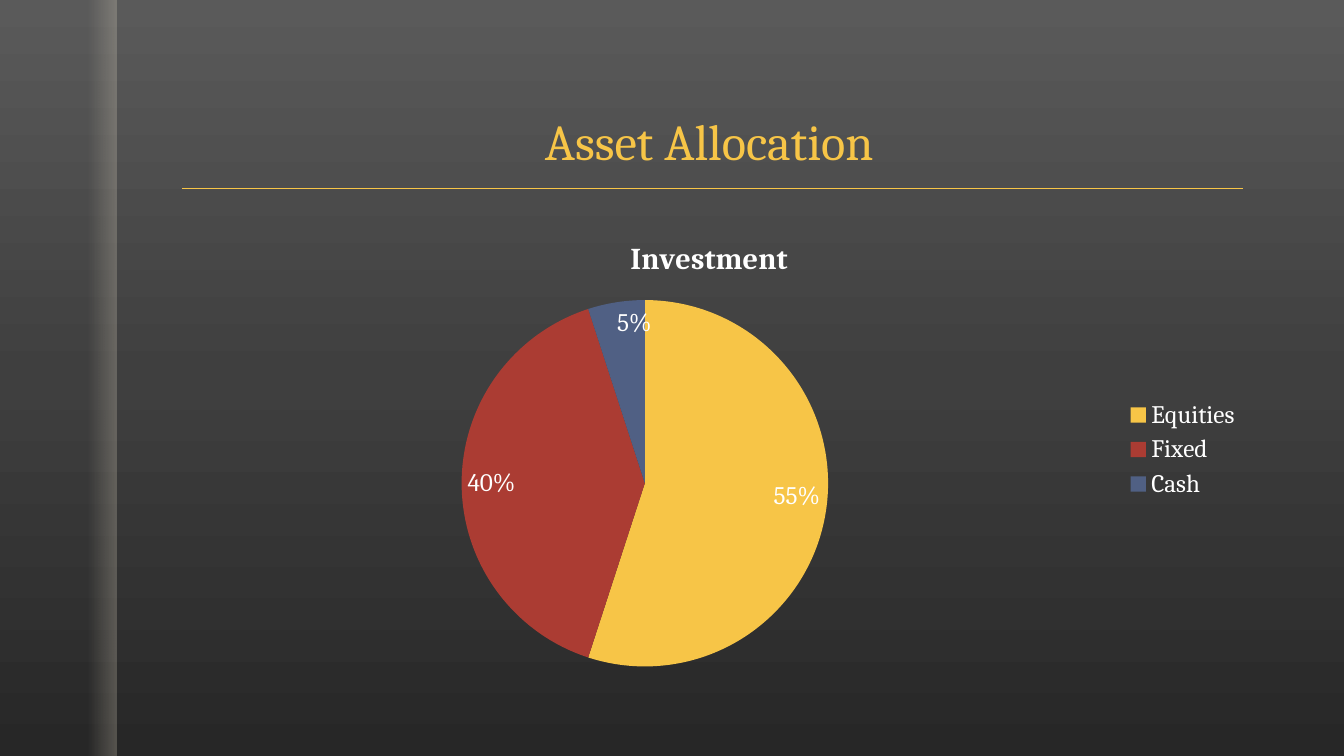
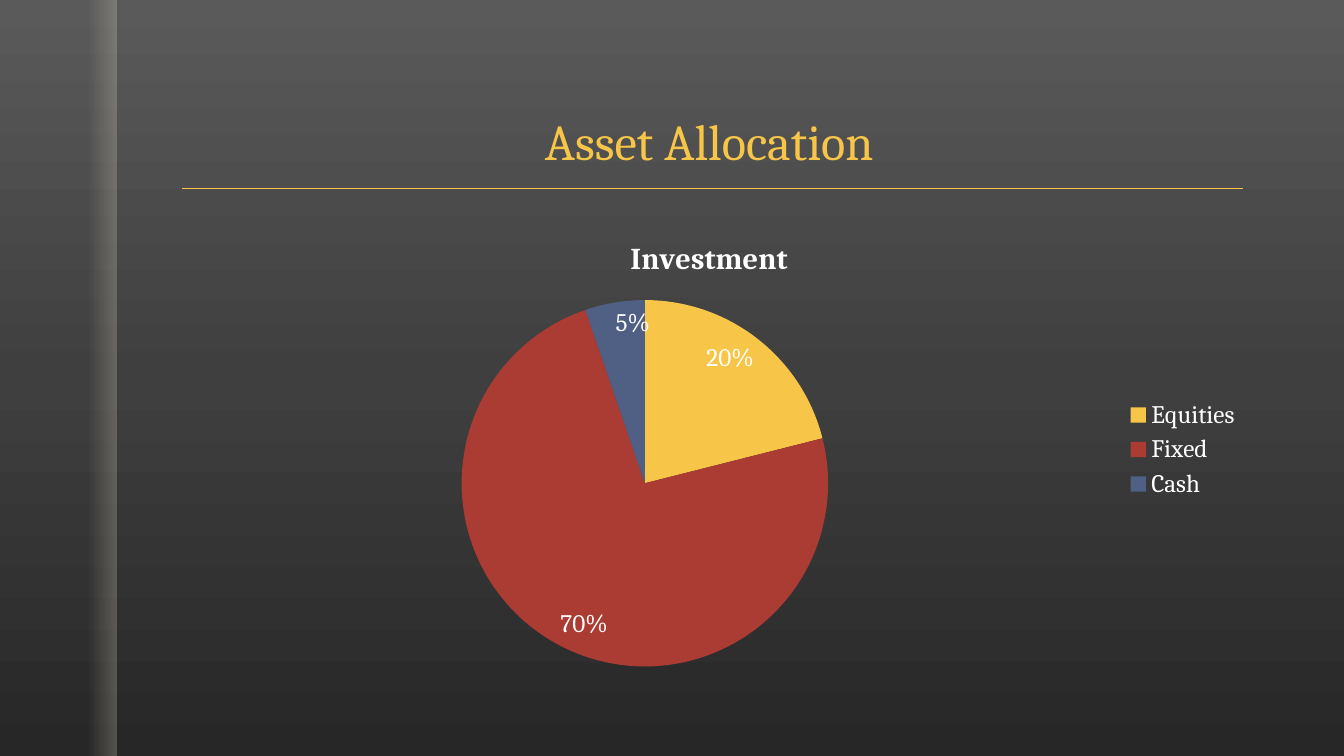
from dataclasses import dataclass

from lxml import etree
from pptx import Presentation
from pptx.chart.data import CategoryChartData
from pptx.dml.color import RGBColor
from pptx.enum.chart import XL_CHART_TYPE, XL_LABEL_POSITION, XL_LEGEND_POSITION
from pptx.enum.shapes import MSO_CONNECTOR, MSO_SHAPE
from pptx.enum.text import MSO_ANCHOR, PP_ALIGN
from pptx.oxml.ns import qn
from pptx.util import Inches, Pt

PIE = XL_CHART_TYPE.PIE
INSIDE_END = XL_LABEL_POSITION.INSIDE_END
LEGEND_RIGHT = XL_LEGEND_POSITION.RIGHT
STRAIGHT = MSO_CONNECTOR.STRAIGHT
RECTANGLE = MSO_SHAPE.RECTANGLE
BOTTOM = MSO_ANCHOR.BOTTOM
CENTER = PP_ALIGN.CENTER


@dataclass(frozen=True)
class Theme:
    font: str = "Cambria"
    accent: str = "F7C547"
    text: str = "FFFFFF"
    slices: tuple = ("F7C547", "AB3C33", "506084")
    # Gradient stops: position, colour, opacity (all in percent)
    background: tuple = ((0, "5A5A5A", 100), (50, "3F3F3F", 100), (100, "272727", 100))
    band: tuple = ((75, "E8DEC9", 0), (100, "E8DEC9", 25))
    title_size: float = 36
    chart_size: float = 18
    chart_title_size: float = 21.6


THEME = Theme()
WIDTH, HEIGHT = Inches(13.33), Inches(7.5)
BAND_WIDTH = Inches(1.16)
LEFT, CONTENT_WIDTH = Inches(1.66), Inches(10.75)
TITLE_TOP, TITLE_HEIGHT = Inches(0.42), Inches(1.33)
RULE_LEFT, RULE_RIGHT, RULE_TOP = Inches(1.81), Inches(12.33), Inches(1.87)
CHART_TOP, CHART_HEIGHT = Inches(2.17), Inches(4.58)

CATEGORIES = ("Equities", "Fixed", "Cash")
ALLOCATIONS = ((0.55, 0.4, 0.05), (0.2, 0.7, 0.05))


def rgb(value):
    return RGBColor.from_string(value)


def set_gradient(fill, element, stops, angle):
    """Fill with a linear gradient; angle is counter-clockwise in degrees."""
    fill.gradient()
    fill.gradient_angle = angle
    stop_list = element.find(".//" + qn("a:gsLst"))
    for old in list(stop_list):
        stop_list.remove(old)
    for position, color, opacity in stops:
        stop = etree.SubElement(stop_list, qn("a:gs"), pos=str(position * 1000))
        clr = etree.SubElement(stop, qn("a:srgbClr"), val=color)
        if opacity < 100:
            etree.SubElement(clr, qn("a:alpha"), val=str(opacity * 1000))


def style_font(font, size, color=THEME.text, bold=False):
    font.name = THEME.font
    font.size = Pt(size)
    font.bold = bold
    font.color.rgb = rgb(color)


def write(tf, text, size, align=CENTER, spacing=None, **font_format):
    p = tf.paragraphs[0]
    p.alignment = align
    p.line_spacing = spacing
    r = p.add_run()
    r.text = text
    style_font(r.font, size, **font_format)


def add_band(s):
    sp = s.shapes.add_shape(RECTANGLE, 0, 0, BAND_WIDTH, HEIGHT)
    sp.shadow.inherit = False
    sp.line.fill.background()
    set_gradient(sp.fill, sp._element.spPr, THEME.band, 0)


def add_rule(s):
    rule = s.shapes.add_connector(STRAIGHT, RULE_LEFT, RULE_TOP, RULE_RIGHT, RULE_TOP)
    rule.line.color.rgb = rgb(THEME.accent)
    rule.line.width = Pt(1)
    etree.SubElement(rule._element.spPr, qn("a:effectLst"))


def add_title(s, text):
    tf = s.shapes.add_textbox(LEFT, TITLE_TOP, CONTENT_WIDTH, TITLE_HEIGHT).text_frame
    tf.word_wrap = True
    tf.vertical_anchor = BOTTOM
    write(tf, text, THEME.title_size, spacing=0.9, color=THEME.accent)


def add_slide(prs, title):
    s = prs.slides.add_slide(prs.slide_layouts[6])
    set_gradient(s.background.fill, s._element, THEME.background, 270)
    add_band(s)
    add_rule(s)
    add_title(s, title)
    return s


def add_pie(s, name, categories, values):
    data = CategoryChartData(number_format="0%")
    data.categories = categories
    data.add_series(name, values)
    chart = s.shapes.add_chart(
        PIE, LEFT, CHART_TOP, CONTENT_WIDTH, CHART_HEIGHT, data
    ).chart
    style_font(chart.font, THEME.chart_size)
    chart.has_title = True
    write(chart.chart_title.text_frame, name, THEME.chart_title_size, bold=True)

    chart.has_legend = True
    chart.legend.position = LEGEND_RIGHT
    chart.legend.include_in_layout = False

    plot = chart.plots[0]
    plot.vary_by_categories = True
    plot.has_data_labels = True
    labels = plot.data_labels
    labels.show_value = True
    labels.show_percentage = False
    labels.number_format = "0%"
    labels.number_format_is_linked = False
    labels.position = INSIDE_END
    style_font(labels.font, THEME.chart_size)
    for i, color in enumerate(THEME.slices):
        fill = plot.series[0].points[i].format.fill
        fill.solid()
        fill.fore_color.rgb = rgb(color)


def main():
    prs = Presentation()
    prs.slide_width, prs.slide_height = WIDTH, HEIGHT
    for values in ALLOCATIONS:
        s = add_slide(prs, "Asset Allocation")
        add_pie(s, "Investment", CATEGORIES, values)
    prs.save("out.pptx")


if __name__ == "__main__":
    main()
